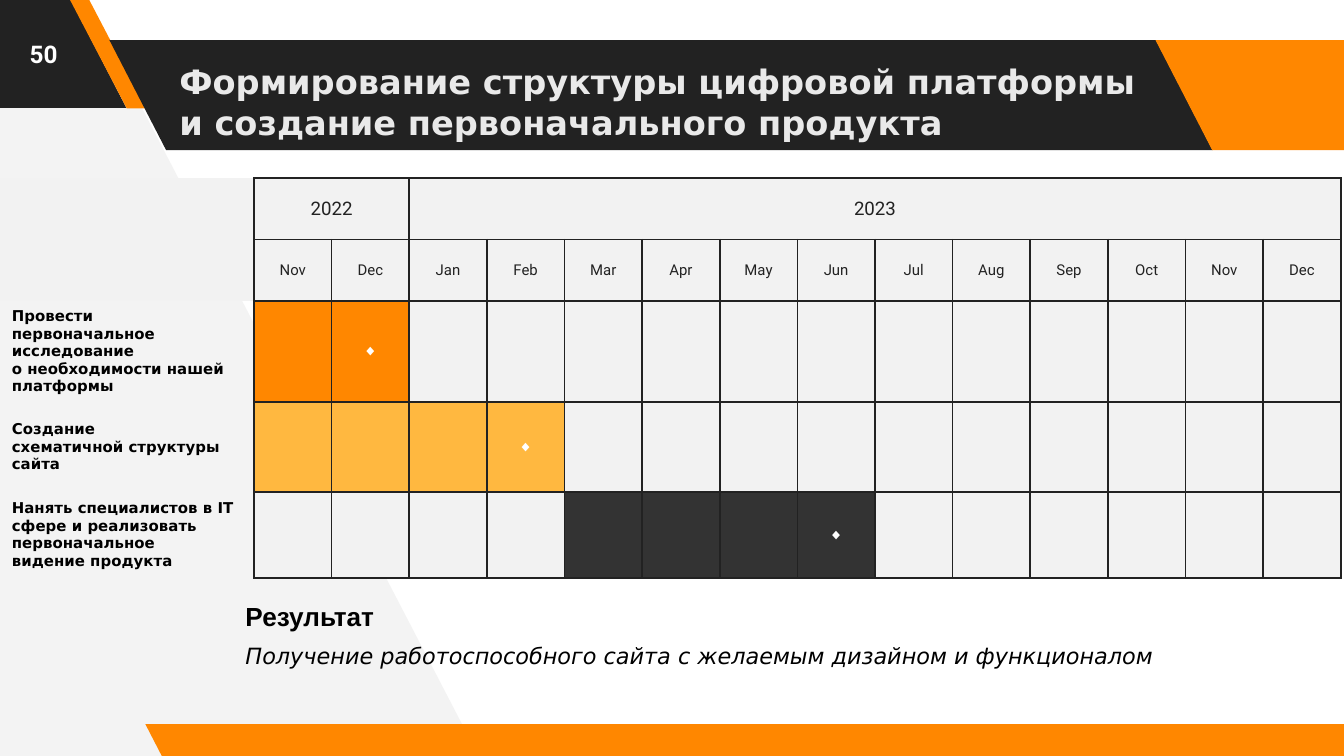
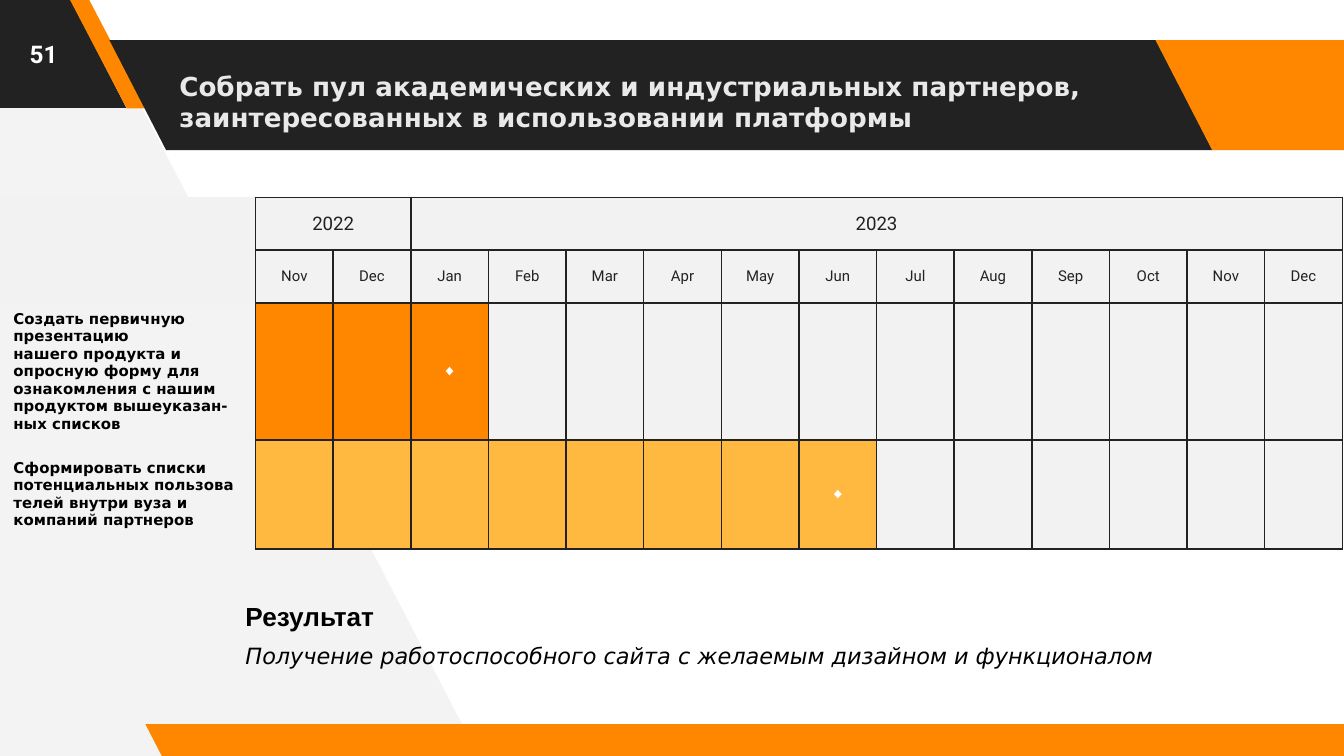
"""Build two roadmap slides, each with a Gantt table and its expected result."""
from lxml import etree
from pptx import Presentation
from pptx import util as u
from pptx.dml.color import RGBColor
from pptx.enum import shapes, text
from pptx.oxml.ns import qn

Cm = u.Cm
ORANGE = RGBColor(0xFF, 0x87, 0x00)
AMBER = RGBColor(0xFF, 0xB8, 0x40)
CHARCOAL = RGBColor(0x33, 0x33, 0x33)
DARK = RGBColor(0x22, 0x22, 0x22)
CELL_GREY = RGBColor(0xF2, 0xF2, 0xF2)
WEDGE_GREY = RGBColor(0xF3, 0xF3, 0xF3)
TITLE_GREY = RGBColor(0xE9, 0xE9, 0xE9)
WHITE = RGBColor(0xFF, 0xFF, 0xFF)
BLACK = RGBColor(0, 0, 0)
SANS, ROBOTO, ARIAL = "DejaVu Sans", "Roboto", "Arial"
TIE, HARD_SPACE = "~", chr(160)

WEDGE = [(9.04, 14.28), (1.57, -0.1), (-0.15, -0.1), (-0.05, 14.38)]
BANDS = [
    (-2.51, -0.05, 4.9, 2.09, 0.515, DARK),
    (1.31, -0.03, 1.45, 2.08, 0.75, ORANGE),
    (2.07, 0.76, 20.85, 2.08, 0.515, DARK),
    (21.84, 0.76, 4.88, 2.08, 0.515, ORANGE),
    (2.75, 13.69, 23.24, 0.64, 0.515, ORANGE),
]
MONTHS = "Nov Dec Jan Feb Mar Apr May Jun Jul Aug Sep Oct Nov Dec".split()
TABLE_WIDTH, LABEL_WIDTH = 25.37, 4.83
MONTH_WIDTH = (TABLE_WIDTH - LABEL_WIDTH) / len(MONTHS)

SLIDES = [
    {
        "number": "50",
        "title": "Формирование~структуры~цифровой платформы и создание первоначального продукта",
        "title_size": 18,
        "table_at": (-0.03, 3.37),
        "rows": [1.16, 1.16, 1.7, 1.7, 1.62],
        "tasks": [
            ("Провести первоначальное исследование о~необходимости нашей платформы",
             None, 1, 2, ORANGE),
            ("Создание схематичной~структуры сайта", WEDGE_GREY, 1, 4, AMBER),
            ("Нанять специалистов в IT сфере и~реализовать первоначальное видение~продукта",
             None, 5, 8, CHARCOAL),
        ],
    },
    {
        "number": "51",
        "title": "Собрать~пул~академических~и~индустриальных~партнеров,\v"
                 "заинтересованных~в использовании~платформы",
        "title_size": 14,
        "table_at": (0, 3.73),
        "rows": [1, 1, 2.44, 2.06],
        "tasks": [
            ("Создать первичную презентацию нашего~продукта и опросную форму для "
             "ознакомления~с нашим продуктом~вышеуказан-ных списков",
             WEDGE_GREY, 1, 3, ORANGE),
            ("Сформировать списки потенциальных~пользователей внутри вуза и "
             "компаний~партнеров", WEDGE_GREY, 1, 8, AMBER),
        ],
    },
]


def write(frame, words, size=8, font=ROBOTO, color=DARK, bold=False, italic=False,
          align=text.PP_ALIGN.LEFT, before=0):
    para = frame.add_paragraph() if frame.text else frame.paragraphs[0]
    para.text = words.replace(TIE, HARD_SPACE)
    para.alignment = align
    para.space_before = u.Pt(before)
    if not para.runs:
        para.add_run()
    for span in para.runs:
        span.font.size = u.Pt(size)
        span.font.name = font
        span.font.color.rgb = color
        span.font.bold = bold
        span.font.italic = italic


def add_frame(page, left, top, width, height, anchor):
    frame = page.shapes.add_textbox(Cm(left), Cm(top), Cm(width), Cm(height)).text_frame
    frame.word_wrap = True
    frame.vertical_anchor = anchor
    frame.margin_left = frame.margin_right = Cm(0.25)
    frame.margin_top = frame.margin_bottom = Cm(0.25)
    return frame


CENTER = text.PP_ALIGN.CENTER
MIDDLE, TOP = text.MSO_ANCHOR.MIDDLE, text.MSO_ANCHOR.TOP

deck = Presentation()
deck.slide_width, deck.slide_height = Cm(25.4), Cm(14.29)

for content in SLIDES:
    page = deck.slides.add_slide(deck.slide_layouts[6])

    points = [(Cm(x), Cm(y)) for x, y in WEDGE]
    builder = page.shapes.build_freeform(*points[0])
    builder.add_line_segments(points[1:])
    wedge = builder.convert_to_shape()
    wedge.shadow.inherit = False
    wedge.fill.solid()
    wedge.fill.fore_color.rgb = WEDGE_GREY
    wedge.line.fill.background()

    for left, top, width, height, slant, color in BANDS:
        band = page.shapes.add_shape(shapes.MSO_SHAPE.PARALLELOGRAM,
                                     Cm(left), Cm(top), Cm(width), Cm(height))
        band.adjustments[0] = slant
        band._element.spPr.xfrm.set("flipH", "1")
        band.shadow.inherit = False
        band.fill.solid()
        band.fill.fore_color.rgb = color
        band.line.fill.background()

    title = add_frame(page, 3.14, 0.88, 18.67, 2.08, MIDDLE)
    write(title, content["title"], size=content["title_size"], font=SANS,
          color=TITLE_GREY, bold=True)
    number = add_frame(page, 0, 0, 1.65, 2.03, MIDDLE)
    write(number, content["number"], size=13, color=WHITE, bold=True, align=CENTER)

    left, top = content["table_at"]
    heights = content["rows"]
    holder = page.shapes.add_table(len(heights), len(MONTHS) + 1, Cm(left), Cm(top),
                                   Cm(TABLE_WIDTH), Cm(sum(heights)))
    gantt = holder.table
    gantt.first_row = gantt.horz_banding = False
    for row, height in zip(gantt.rows, heights):
        row.height = Cm(height)
    for index, column in enumerate(gantt.columns):
        column.width = Cm(MONTH_WIDTH if index else LABEL_WIDTH)
    gantt.cell(0, 1).merge(gantt.cell(0, 2))
    gantt.cell(0, 3).merge(gantt.cell(0, len(MONTHS)))

    for r in range(len(heights)):
        for c in range(len(MONTHS) + 1):
            cell = gantt.cell(r, c)
            cell.vertical_anchor = MIDDLE
            cell.margin_top = cell.margin_bottom = Cm(0.11)
            words, style, fill = "", {"align": CENTER}, CELL_GREY
            if r == 0:
                words = {1: "2022", 3: "2023"}.get(c, "")
                style["size"] = 10
            elif r == 1:
                words = MONTHS[c - 1] if c else ""
            else:
                label, label_fill, start, end, color = content["tasks"][r - 2]
                if c == 0:
                    words, fill = label, label_fill
                    style = {"font": SANS, "color": BLACK, "bold": True}
                elif start <= c <= end:
                    fill = color
                    if c == end:
                        words = "◆"
                        style.update(font=ARIAL, color=WHITE)
            write(cell.text_frame, words, **style)

            properties = cell._tc.get_or_add_tcPr()
            for place, side in enumerate(("lnL", "lnR", "lnT", "lnB")):
                edge = etree.Element(qn(f"a:{side}"), w=str(u.Pt(1)))
                if c or side == "lnR":
                    paint = etree.SubElement(edge, qn("a:solidFill"))
                    etree.SubElement(paint, qn("a:srgbClr"), val=str(DARK))
                else:
                    etree.SubElement(edge, qn("a:noFill"))
                properties.insert(place, edge)
            if fill is None:
                cell.fill.background()
            else:
                cell.fill.solid()
                cell.fill.fore_color.rgb = fill

    result = add_frame(page, 4.39, 11.09, 22.3, 2.67, TOP)
    write(result, "Результат", size=14, font=ARIAL, color=BLACK, bold=True)
    write(result, "Получение~работоспособного~сайта с желаемым~дизайном и~функционалом",
          size=12, font=SANS, color=BLACK, italic=True, before=6)

deck.save("out.pptx")
